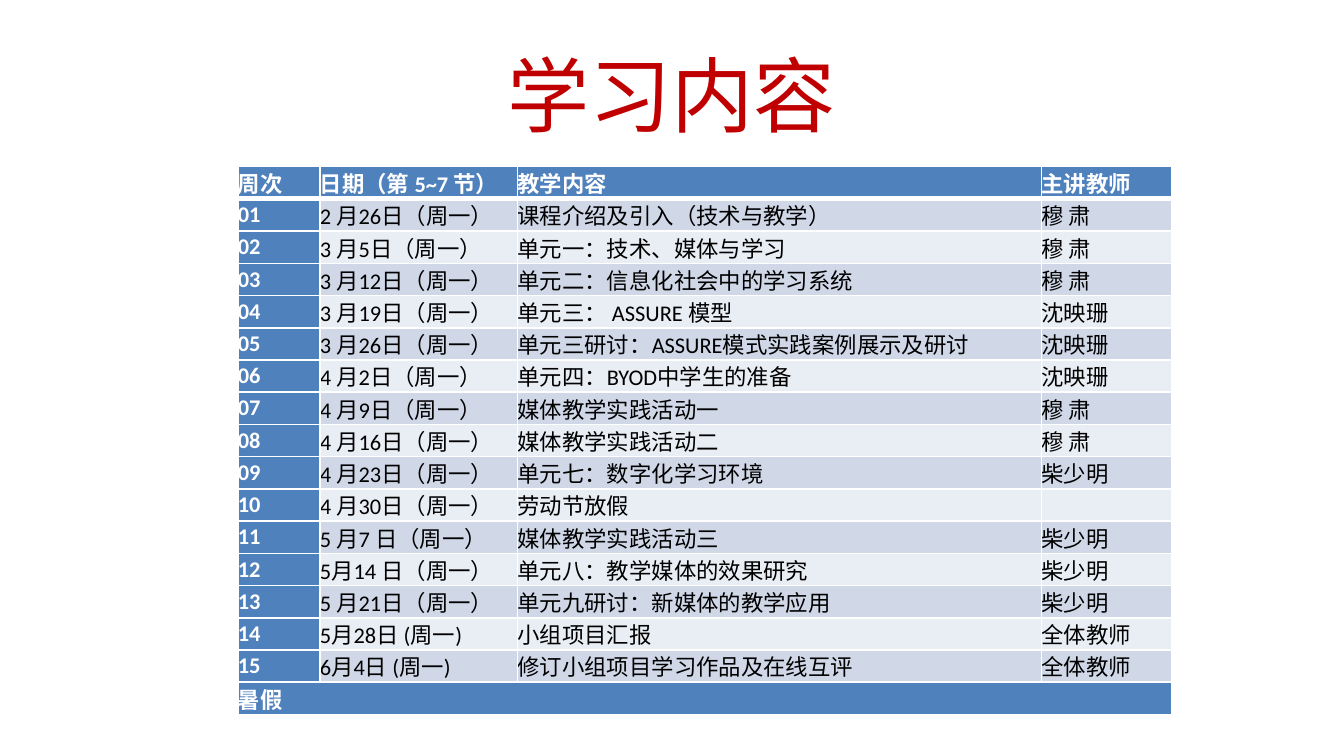
"""Build a course schedule slide with a title and a table."""
from lxml.etree import SubElement
from pptx import Presentation
from pptx.dml.color import RGBColor
from pptx.enum.text import MSO_ANCHOR, PP_ALIGN
from pptx.oxml.ns import qn
from pptx.util import Inches, Pt

TITLE = "学习内容"
HEADER = ("周次", "日期（第 5~7 节）", "教学内容", "主讲教师")
LESSONS = [
    ("2 月26日（周一）", "课程介绍及引入（技术与教学）", "穆 肃"),
    ("3 月5日（周一）", "单元一：技术、媒体与学习", "穆 肃"),
    ("3 月12日（周一）", "单元二：信息化社会中的学习系统", "穆 肃"),
    ("3 月19日（周一）", "单元三： ASSURE 模型", "沈映珊"),
    ("3 月26日（周一）", "单元三研讨：ASSURE模式实践案例展示及研讨", "沈映珊"),
    ("4 月2日（周一）", "单元四：BYOD中学生的准备", "沈映珊"),
    ("4 月9日（周一）", "媒体教学实践活动一", "穆 肃"),
    ("4 月16日（周一）", "媒体教学实践活动二", "穆 肃"),
    ("4 月23日（周一）", "单元七：数字化学习环境", "柴少明"),
    ("4 月30日（周一）", "劳动节放假", ""),
    ("5 月7 日（周一）", "媒体教学实践活动三", "柴少明"),
    ("5月14 日（周一）", "单元八：教学媒体的效果研究", "柴少明"),
    ("5 月21日（周一）", "单元九研讨：新媒体的教学应用", "柴少明"),
    ("5月28日 (周一)", "小组项目汇报", "全体教师"),
    ("6月4日 (周一)", "修订小组项目学习作品及在线互评", "全体教师"),
]
FOOTER = ("暑假", "", "", "")
COL_WIDTHS = (0.61, 1.47, 3.9, 0.97)
ROW_HEIGHT = 0.24
BLUE, BANDS = "4F81BD", ("E9EDF4", "D0D8E8")
WHITE, BLACK, RED = "FFFFFF", "000000", "C00000"


def rgb(value):
    return RGBColor.from_string(value)


def style_paragraph(p, size, color, name, bold=False):
    p.font.size, p.font.name, p.font.bold = Pt(size), name, bold
    p.font.color.rgb = rgb(color)


def set_borders(cell, top, bottom):
    tc_pr = cell._tc.get_or_add_tcPr()
    for side, width in (("L", 1), ("R", 1), ("T", top), ("B", bottom)):
        line = SubElement(tc_pr, qn(f"a:ln{side}"), w=str(Pt(width)))
        fill = SubElement(line, qn("a:solidFill"))
        SubElement(fill, qn("a:srgbClr"), val=WHITE)


def fill_cell(cell, text, row, accent):
    cell.margin_left = cell.margin_right = cell.margin_top = cell.margin_bottom = 0
    cell.vertical_anchor = MSO_ANCHOR.MIDDLE
    set_borders(cell, 3 if row == 1 else 1, 3 if row == 0 else 1)
    cell.fill.solid()
    cell.fill.fore_color.rgb = rgb(BLUE if accent else BANDS[row % 2])
    p = cell.text_frame.paragraphs[0]
    p.text = text
    p.space_after = Pt(0 if 13 <= row <= 15 else 7.5)
    style_paragraph(p, 12, WHITE if accent else BLACK, "Calibri", accent)
    if not text:
        SubElement(p._p, qn("a:endParaRPr"), sz="1200")


def add_title(s):
    tf = s.shapes.add_textbox(Inches(0.5), Inches(0.23), Inches(9), Inches(0.94)).text_frame
    tf.word_wrap = True
    tf.vertical_anchor = MSO_ANCHOR.MIDDLE
    p = tf.paragraphs[0]
    p.text, p.alignment = TITLE, PP_ALIGN.CENTER
    style_paragraph(p, 44, RED, "Noto Sans CJK SC")


def add_schedule(s):
    weeks = [(f"{n:02}", *lesson) for n, lesson in enumerate(LESSONS, 1)]
    rows = [HEADER, *weeks, FOOTER]
    last = len(rows) - 1
    table = s.shapes.add_table(
        len(rows), len(HEADER), Inches(1.77), Inches(1.24),
        Inches(sum(COL_WIDTHS)), Inches(ROW_HEIGHT * len(rows))).table
    for column, width in zip(table.columns, COL_WIDTHS):
        column.width = Inches(width)
    for i, texts in enumerate(rows):
        table.rows[i].height = Inches(ROW_HEIGHT)
        for j, text in enumerate(texts):
            fill_cell(table.cell(i, j), text, i, j == 0 or i in (0, last))
    table.cell(last, 0).merge(table.cell(last, len(HEADER) - 1))


def main():
    prs = Presentation()
    prs.slide_width = Inches(10)
    prs.slide_height = prs.slide_width * 9 // 16
    s = prs.slides.add_slide(prs.slide_layouts[6])
    add_title(s)
    add_schedule(s)
    prs.save("out.pptx")


if __name__ == "__main__":
    main()
